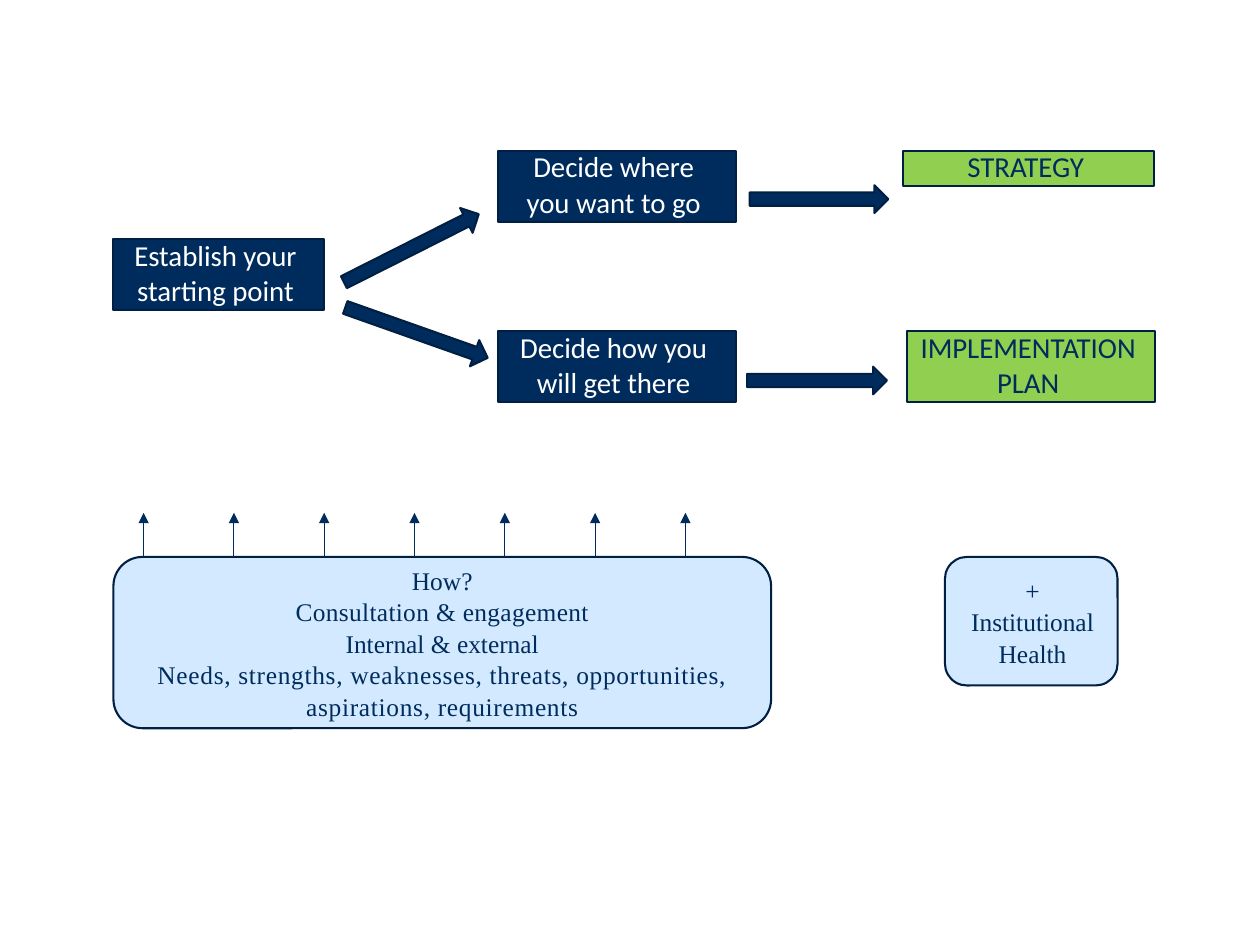
from math import atan2, degrees, hypot

from lxml.etree import SubElement
from pptx import Presentation
from pptx.dml.color import RGBColor
from pptx.enum.shapes import MSO_CONNECTOR, MSO_SHAPE
from pptx.enum.text import MSO_ANCHOR, PP_ALIGN
from pptx.oxml.ns import qn
from pptx.util import Inches, Pt

COLORS = {
    "navy": "002C5D",
    "edge": "001F42",
    "green": "91CF50",
    "pale": "D3E9FF",
    "white": "FFFFFF",
}

prs = Presentation()
prs.slide_width = Inches(10)
prs.slide_height = Inches(7.5)
s = prs.slides.add_slide(prs.slide_layouts[6])


def add_shape(kind, left, top, width, height, fill):
    sp = s.shapes.add_shape(kind, Inches(left), Inches(top), Inches(width), Inches(height))
    sp.shadow.inherit = False
    sp.fill.solid()
    sp.fill.fore_color.rgb = RGBColor.from_string(COLORS[fill])
    sp.line.color.rgb = RGBColor.from_string(COLORS["edge"])
    sp.line.width = Pt(1.2)
    return sp


def add_text(sp, lines, font, size, color, insets):
    tf = sp.text_frame
    tf.word_wrap = True
    tf.margin_left, tf.margin_right = (Inches(v) for v in insets)
    tf.margin_top = tf.margin_bottom = 0
    tf.text = "\n".join(lines)
    for p in tf.paragraphs:
        p.alignment = PP_ALIGN.CENTER
        for r in p.runs:
            r.font.name = font
            r.font.size = Pt(size)
            r.font.color.rgb = RGBColor.from_string(COLORS[color])
    return tf


boxes = [
    (0.9, 1.9, 1.67, 0.56, "navy", "white", ["Establish your", "starting point"]),
    (3.95, 1.2, 1.89, 0.56, "navy", "white", ["Decide where", "you want to go"]),
    (7.17, 1.2, 1.99, 0.28, "green", "navy", ["STRATEGY"]),
    (7.2, 2.63, 1.97, 0.56, "green", "navy", ["IMPLEMENTATION", "PLAN"]),
    (3.95, 2.63, 1.89, 0.56, "navy", "white", ["Decide how you", "will get there"]),
]
for left, top, width, height, fill, color, lines in boxes:
    sp = add_shape(MSO_SHAPE.RECTANGLE, left, top, width, height, fill)
    tf = add_text(sp, lines, "Calibri", 16.5, color, (0, 0.05))
    tf.vertical_anchor = MSO_ANCHOR.TOP
    tf.paragraphs[0].line_spacing = Pt(18.6)
    for p in tf.paragraphs[1:]:
        p.space_before = Pt(0.6)

block_arrows = [
    (5.95, 1.58, 7.05, 1.58),
    (2.74, 2.44, 3.87, 2.84),
    (5.93, 3.02, 7.04, 3.02),
    (2.73, 2.24, 3.8, 1.7),
]
thickness = 0.22
for x1, y1, x2, y2 in block_arrows:
    length = hypot(x2 - x1, y2 - y1)
    sp = add_shape(MSO_SHAPE.RIGHT_ARROW, (x1 + x2 - length) / 2,
                   (y1 + y2 - thickness) / 2, length, thickness, "navy")
    sp.adjustments[0] = 0.48
    sp.adjustments[1] = 0.5
    sp.rotation = degrees(atan2(y2 - y1, x2 - x1))

panels = [
    (0.9, 4.42, 5.22, 1.36, (0.22, 0.22), [
        ("How?", 0),
        ("Consultation & engagement", 20),
        ("Internal & external", 0),
        ("Needs, strengths, weaknesses, threats, opportunities, aspirations, requirements", 40),
    ]),
    (7.5, 4.42, 1.37, 1.02, (0.07, 0.05), [("+", 0), ("Institutional Health", 0)]),
]
for left, top, width, height, insets, lines in panels:
    sp = add_shape(MSO_SHAPE.ROUNDED_RECTANGLE, left, top, width, height, "pale")
    sp.adjustments[0] = 0.17
    tf = add_text(sp, [text for text, _ in lines], "Times New Roman", 14.5, "navy", insets)
    tf.vertical_anchor = MSO_ANCHOR.MIDDLE
    for p, (_, spacing) in zip(tf.paragraphs, lines):
        p.line_spacing = Pt(18)
        for r in p.runs:
            r.font._element.set("spc", str(spacing))

arrow_count = 7
first_x, last_x = 1.14, 5.44
for i in range(arrow_count):
    x = Inches(first_x + i * (last_x - first_x) / (arrow_count - 1))
    cn = s.shapes.add_connector(MSO_CONNECTOR.STRAIGHT, x, Inches(4.42), x, Inches(4.07))
    cn.line.color.rgb = RGBColor.from_string(COLORS["navy"])
    cn.line.width = Pt(0.5)
    sp_pr = cn._element.spPr
    SubElement(sp_pr.find(qn("a:ln")), qn("a:tailEnd"), type="triangle")
    SubElement(sp_pr, qn("a:effectLst"))

prs.save("out.pptx")
